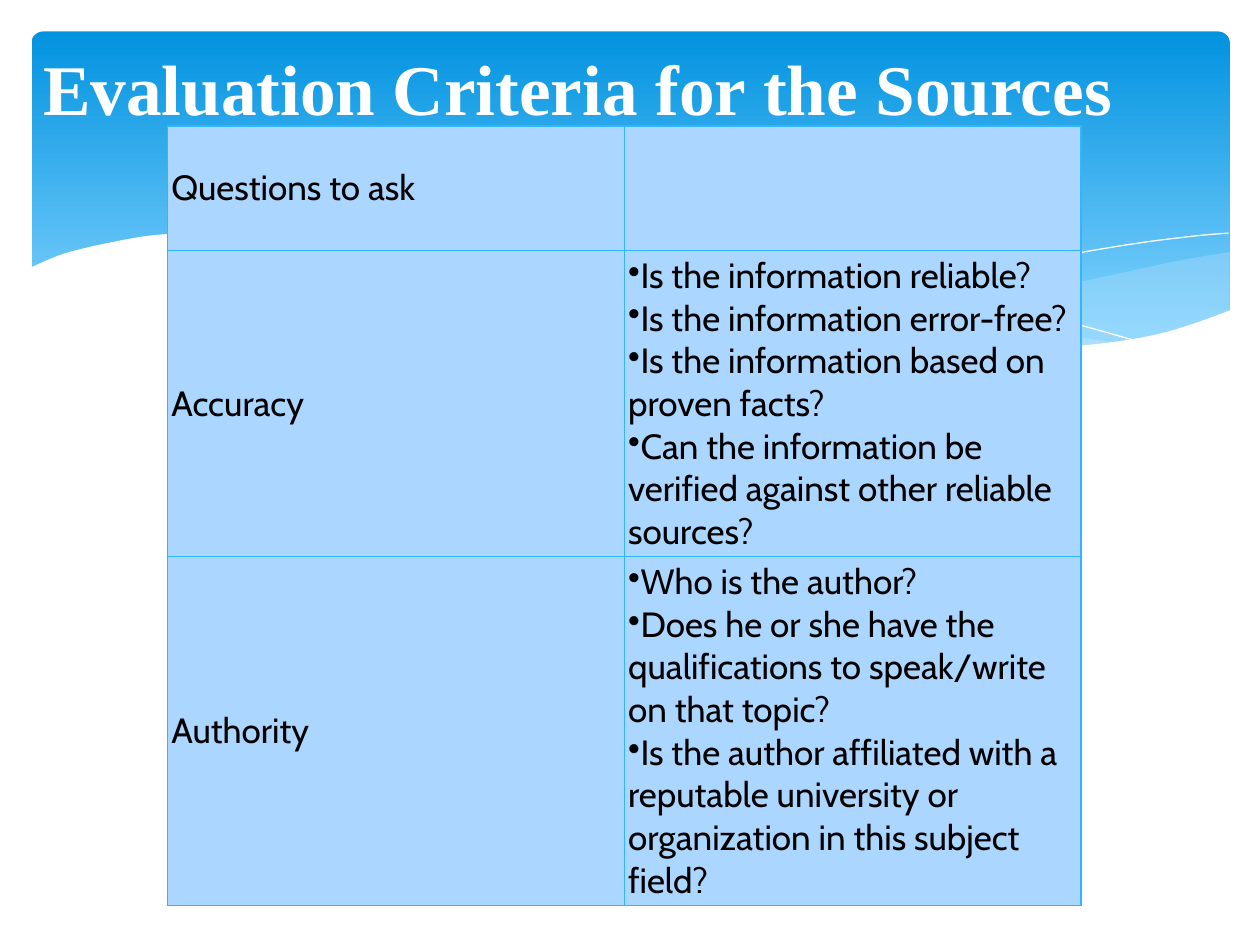
from lxml.etree import SubElement
from pptx import Presentation
from pptx.dml.color import RGBColor
from pptx.enum.shapes import MSO_SHAPE
from pptx.enum.text import MSO_ANCHOR, PP_ALIGN
from pptx.oxml.ns import qn
from pptx.util import Inches, Pt

WHITE = RGBColor(0xFF, 0xFF, 0xFF)
BLACK = RGBColor(0x00, 0x00, 0x00)
DEEP_BLUE = RGBColor(0x02, 0x93, 0xE0)
SKY_BLUE = RGBColor(0x83, 0xD3, 0xFE)
PALE_BLUE = RGBColor(0xC6, 0xE7, 0xFC)
CELL_BLUE = RGBColor(0xAB, 0xD6, 0xFF)
BORDER_BLUE = RGBColor(0x31, 0xB6, 0xFD)

RIGHT_SWELL = [
    [(9.76, 2), (9.35, 2.07), (8.61, 2.23), (7.79, 2.42), (7.06, 2.57), (6.61, 2.65)],
    [(6.61, 2.65), (7.05, 2.71), (7.57, 2.76), (8.14, 2.78), (8.63, 2.75),
     (9.05, 2.69), (9.42, 2.59), (9.76, 2.47)],
]
MIDDLE_SWELL = [
    [(8.93, 2.73), (8.37, 2.65), (7.75, 2.54), (7.06, 2.4), (6.29, 2.22),
     (5.69, 2.08), (5.14, 1.98), (4.65, 1.91), (4.2, 1.87), (3.8, 1.85),
     (3.44, 1.86), (3.13, 1.88), (2.86, 1.91)],
    [(2.86, 1.91), (3.42, 1.99), (4.04, 2.11), (4.49, 2.22), (5.3, 2.4),
     (6.01, 2.55), (6.65, 2.66), (7.22, 2.74), (7.73, 2.77), (8.18, 2.78),
     (8.57, 2.77), (8.93, 2.73)],
]
FALLING_LINE = [
    [(3.09, 1.95), (3.44, 1.9), (3.87, 1.87), (4.33, 1.87), (4.89, 1.9),
     (5.56, 1.97), (6.36, 2.08), (7.27, 2.26), (8.31, 2.51), (9.07, 2.72)],
]
RISING_LINE = [
    [(6.13, 2.57), (6.53, 2.46), (6.95, 2.35), (7.48, 2.23), (8.06, 2.1),
     (8.66, 1.99), (9.1, 1.92), (9.51, 1.87), (9.75, 1.85)],
]
WHITE_WAVE = [
    [(9.77, 2.46), (9.5, 2.56), (9.2, 2.65), (8.87, 2.71), (8.5, 2.75),
     (8.09, 2.77), (7.61, 2.75), (7.08, 2.7), (6.48, 2.62), (5.79, 2.5),
     (5.03, 2.33), (4.47, 2.2), (3.91, 2.07), (3.4, 1.97), (2.92, 1.9),
     (2.5, 1.86), (2.11, 1.84), (1.77, 1.84), (1.46, 1.85), (1.19, 1.87),
     (0.95, 1.91), (0.67, 1.97), (0.46, 2.03), (0.23, 2.13)],
    [(0.23, 3.29), (9.77, 3.29)],
]

COLUMN_WIDTH = 3.625
ROW_HEIGHTS = [0.99, 2.43, 2.76]
CRITERIA = [
    ("Questions to ask", []),
    ("Accuracy", [
        "Is the information reliable?",
        "Is the information error-free?",
        "Is the information based on proven facts?",
        "Can the information be verified against other reliable sources?",
    ]),
    ("Authority", [
        "Who is the author?",
        "Does he or she have the qualifications to speak/write on that topic?",
        "Is the author affiliated with a reputable university or organization "
        "in this subject field?",
    ]),
]


def smooth_curve(points, steps=4):
    if len(points) < 3:
        return points
    padded = [points[0], *points, points[-1]]
    curve = [points[0]]
    for a, b, c, d in zip(padded, padded[1:], padded[2:], padded[3:]):
        for step in range(1, steps + 1):
            t = step / steps
            curve.append(tuple(
                q + t * (r - p) / 2
                + t**2 * (2 * p - 5 * q + 4 * r - s) / 2
                + t**3 * (3 * q - p - 3 * r + s) / 2
                for p, q, r, s in zip(a, b, c, d)))
    return curve


def add_wave(slide, curves, fill=None, opacity=100, line=None):
    points = [(Inches(x), Inches(y))
              for curve in curves for x, y in smooth_curve(curve)]
    builder = slide.shapes.build_freeform(*points[0])
    builder.add_line_segments(points[1:], close=fill is not None)
    wave = builder.convert_to_shape()
    wave.shadow.inherit = False
    if fill is None:
        wave.fill.background()
    else:
        wave.fill.solid()
        wave.fill.fore_color.rgb = fill
        color = wave.fill._xPr.find(qn("a:solidFill"))[0]
        SubElement(color, qn("a:alpha"), val=str(opacity * 1000))
    if line is None:
        wave.line.fill.background()
    else:
        wave.line.color.rgb = line
        wave.line.width = Pt(0)


def add_banner(slide):
    banner = slide.shapes.add_shape(
        MSO_SHAPE.ROUNDED_RECTANGLE,
        Inches(0.25), Inches(0.25), Inches(9.51), Inches(2.7))
    banner.adjustments[0] = 0.034
    banner.shadow.inherit = False
    banner.line.fill.background()
    banner.fill.gradient()
    banner.fill.gradient_angle = 270
    stops = [(0, DEEP_BLUE), (0.9, SKY_BLUE)]
    for stop, (position, color) in zip(banner.fill.gradient_stops, stops):
        stop.position = position
        stop.color.rgb = color


def write_text(para, text, size=20, font="Cabin", color=BLACK, bold=False,
               align=PP_ALIGN.LEFT, bullet=None):
    para.alignment = align
    span = para.add_run()
    span.text = text
    span.font.size = Pt(size)
    span.font.name = font
    span.font.color.rgb = color
    span.font.bold = bold
    if bullet:
        properties = para._p.get_or_add_pPr()
        properties.set("marL", "0")
        properties.set("indent", "0")
        SubElement(properties, qn("a:buChar"), char=bullet)


def style_cell(cell):
    cell.vertical_anchor = MSO_ANCHOR.MIDDLE
    cell.margin_left = cell.margin_right = Inches(0.03)
    cell.margin_top = cell.margin_bottom = Inches(0.03)
    properties = cell._tc.get_or_add_tcPr()
    for side in ("a:lnL", "a:lnR", "a:lnT", "a:lnB"):
        border = SubElement(properties, qn(side), w=str(Pt(0.75)))
        fill = SubElement(border, qn("a:solidFill"))
        SubElement(fill, qn("a:srgbClr"), val=str(BORDER_BLUE))
    cell.fill.solid()
    cell.fill.fore_color.rgb = CELL_BLUE


def add_criteria_table(slide):
    table = slide.shapes.add_table(
        len(CRITERIA), 2, Inches(1.33), Inches(1),
        Inches(2 * COLUMN_WIDTH), Inches(sum(ROW_HEIGHTS))).table
    table.first_row = table.horz_banding = False
    for row, height, (name, questions) in zip(table.rows, ROW_HEIGHTS, CRITERIA):
        row.height = Inches(height)
        for cell in row.cells:
            style_cell(cell)
        name_frame, question_frame = [cell.text_frame for cell in row.cells]
        write_text(name_frame.paragraphs[0], name)
        for index, question in enumerate(questions):
            para = question_frame.add_paragraph() if index else question_frame.paragraphs[0]
            write_text(para, question, bullet="•")


def add_title(slide, text):
    box = slide.shapes.add_textbox(
        Inches(0), Inches(0.25), Inches(9.17), Inches(0.67))
    frame = box.text_frame
    frame.word_wrap = True
    frame.margin_top = Inches(0.1)
    write_text(frame.paragraphs[0], text, size=40.7, font="Times New Roman",
               color=WHITE, bold=True, align=PP_ALIGN.CENTER)


def main():
    deck = Presentation()
    deck.slide_width, deck.slide_height = Inches(10), Inches(7.5)
    slide = deck.slides.add_slide(deck.slide_layouts[6])
    add_banner(slide)
    add_wave(slide, RIGHT_SWELL, fill=PALE_BLUE, opacity=29)
    add_wave(slide, MIDDLE_SWELL, fill=PALE_BLUE, opacity=40)
    add_wave(slide, FALLING_LINE, line=WHITE)
    add_wave(slide, RISING_LINE, line=WHITE)
    add_wave(slide, WHITE_WAVE, fill=WHITE)
    add_criteria_table(slide)
    add_title(slide, "Evaluation Criteria for the Sources")
    deck.save("out.pptx")


if __name__ == "__main__":
    main()
